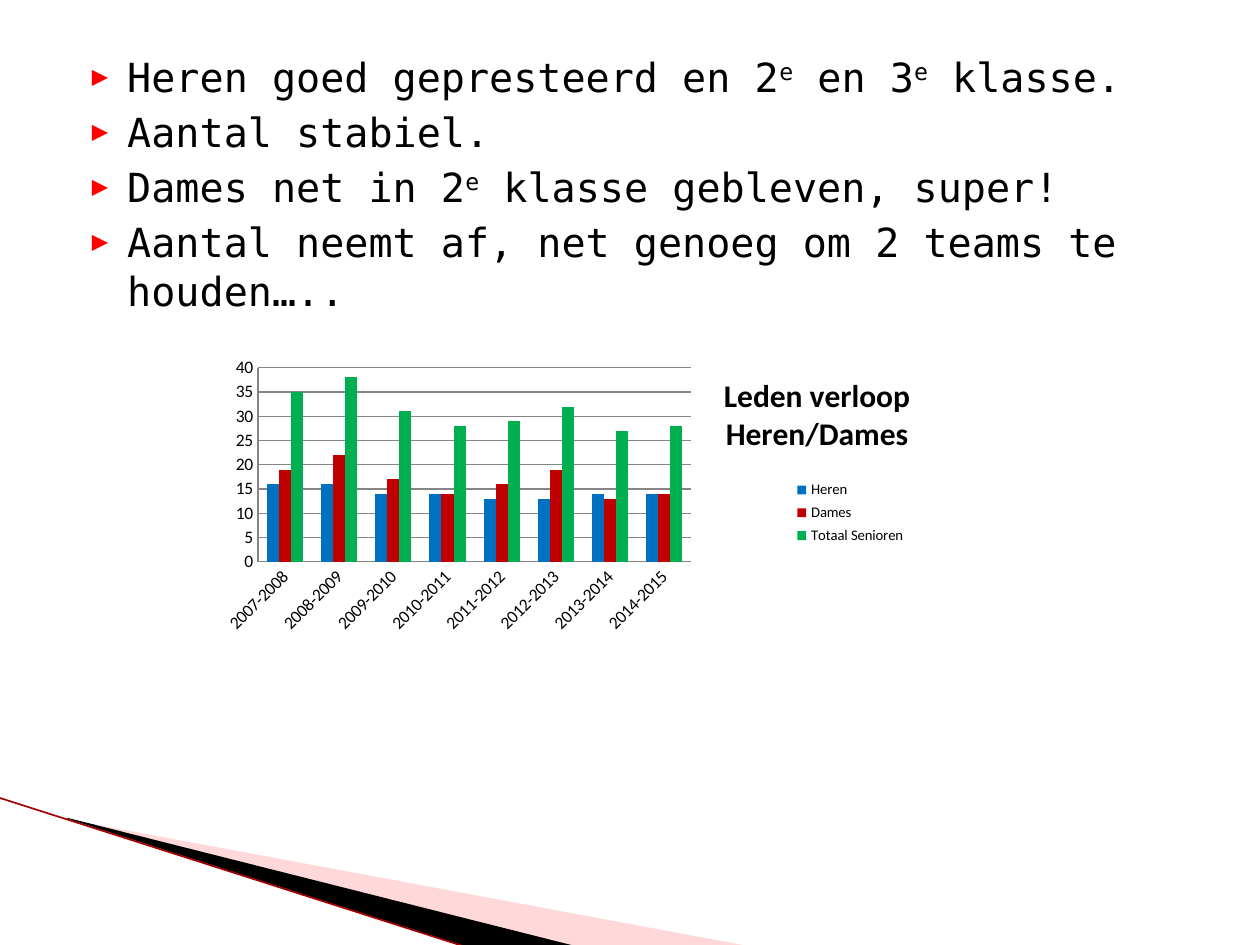
import pptx
import pptx.chart.data
import pptx.dml.color
import pptx.enum.chart
import pptx.enum.shapes
import pptx.enum.text
import pptx.oxml
import pptx.oxml.ns
import pptx.util

Pt = pptx.util.Pt
RGB = pptx.dml.color.RGBColor.from_string
qn = pptx.oxml.ns.qn
COLORS = {
    "text": "000000", "bullet": "FF0000", "pink": "FFA2A2", "black": "000000",
    "edge": "A50000", "axis": "868686",
    "Heren": "0070C0", "Dames": "C00000", "Totaal Senioren": "00B050",
}
A_NS = 'xmlns:a="http://schemas.openxmlformats.org/drawingml/2006/main"'
C_NS = 'xmlns:c="http://schemas.openxmlformats.org/drawingml/2006/chart"'


def place_part(part, position, x, y, w=None, h=None, inner=False):
    for old_layout in part.findall(qn("c:layout")):
        part.remove(old_layout)
    target = '<c:layoutTarget val="inner"/>' if inner else ""
    size = f'<c:w val="{w}"/><c:h val="{h}"/>' if w else ""
    part.insert(position, pptx.oxml.parse_xml(
        f'<c:layout {C_NS}><c:manualLayout>{target}'
        f'<c:xMode val="edge"/><c:yMode val="edge"/>'
        f'<c:x val="{x}"/><c:y val="{y}"/>{size}</c:manualLayout></c:layout>'))


def style_font(font, size, bold=False, name="Calibri"):
    font.name = name
    font.size = Pt(size)
    font.bold = bold
    font.color.rgb = RGB(COLORS["text"])


deck = pptx.Presentation()
deck.slide_width, deck.slide_height = Pt(720), Pt(540)
slide = deck.slides.add_slide(deck.slide_layouts[1])
heading = slide.shapes.title._element
heading.getparent().remove(heading)

wedges = [
    ("pink", 40, [(39.6, 468.4), (428.4, 540.7), (328.3, 540.7), (39.6, 468)]),
    ("black", 100, [(38.2, 467.3), (329, 540.7), (267.8, 541.4), (38.9, 468)]),
]
for color, opacity, points in wedges:
    outline = slide.shapes.build_freeform(Pt(points[0][0]), Pt(points[0][1]))
    outline.add_line_segments([(Pt(x), Pt(y)) for x, y in points[1:]], close=True)
    wedge = outline.convert_to_shape()
    wedge.shadow.inherit = False
    wedge.line.fill.background()
    wedge.fill.solid()
    wedge.fill.fore_color.rgb = RGB(COLORS[color])
    if opacity < 100:
        wedge._element.spPr.find(".//" + qn("a:srgbClr")).append(
            pptx.oxml.parse_xml(f'<a:alpha {A_NS} val="{opacity * 1000}"/>'))

edge = slide.shapes.add_connector(
    pptx.enum.shapes.MSO_CONNECTOR.STRAIGHT, Pt(-0.7), Pt(455.8), Pt(267.1), Pt(541.4))
edge.line.color.rgb = RGB(COLORS["edge"])
edge.line.width = Pt(0.95)
edge._element.spPr.append(pptx.oxml.parse_xml(f"<a:effectLst {A_NS}/>"))

remarks = slide.placeholders[1]
remarks.left, remarks.top, remarks.width, remarks.height = Pt(36.7), Pt(25.3), Pt(648), Pt(130)
remarks.text_frame.auto_size = pptx.enum.text.MSO_AUTO_SIZE.NONE
remarks.text_frame.word_wrap = True
remark_runs = [
    ["Heren goed gepresteerd en 2", "e", " en 3", "e", " klasse."],
    ["Aantal stabiel."],
    ["Dames net in 2", "e", " klasse gebleven, super!"],
    ["Aantal neemt af, net genoeg om 2 teams te houden….."],
]
for index, pieces in enumerate(remark_runs):
    remark = remarks.text_frame.paragraphs[0] if index == 0 else remarks.text_frame.add_paragraph()
    remark.space_before = Pt(3.2 if index else 0)
    remark.line_spacing = Pt(28.3)
    properties = remark._p.get_or_add_pPr()
    properties.set("marL", str(Pt(28.8)))
    properties.set("indent", str(-Pt(20.2)))
    for bullet in (
        f'<a:buClr {A_NS}><a:srgbClr val="{COLORS["bullet"]}"/></a:buClr>',
        f'<a:buSzPct {A_NS} val="68000"/>',
        f'<a:buFont {A_NS} typeface="DejaVu Sans Mono"/>',
        f'<a:buChar {A_NS} char="▶"/>',
    ):
        properties.append(pptx.oxml.parse_xml(bullet))
    style_font(remark.font, 22.9, name="DejaVu Sans Mono")
    for piece in pieces:
        run = remark.add_run()
        run.text = piece
        if piece == "e":
            run.font._element.set("baseline", "30000")

members = pptx.chart.data.CategoryChartData(number_format="0")
members.categories = [f"{year}-{year + 1}" for year in range(2007, 2015)]
members.add_series("Heren", [16, 16, 14, 14, 13, 13, 14, 14])
members.add_series("Dames", [19, 22, 17, 14, 16, 19, 13, 14])
members.add_series("Totaal Senioren", [35, 38, 31, 28, 29, 32, 27, 28])
chart = slide.shapes.add_chart(
    pptx.enum.chart.XL_CHART_TYPE.COLUMN_CLUSTERED,
    Pt(121.7), Pt(196.6), Pt(402.5), Pt(193), members).chart
style_font(chart.font, 10)

chart.has_title = True
chart_title = chart.chart_title.text_frame
chart_title.text = "Leden verloop\nHeren/Dames"
for line in chart_title.paragraphs:
    style_font(line.font, 18, bold=True)
place_part(chart.chart_title._element, 1, 0.72, 0.08)

plot = chart.plots[0]
plot.gap_width = 150
plot.overlap = 0
plot.vary_by_categories = False
for series in plot.series:
    series.format.fill.solid()
    series.format.fill.fore_color.rgb = RGB(COLORS[series.name])
place_part(chart._chartSpace.chart.plotArea, 0, 0.064, 0.07, 0.615, 0.575, inner=True)

for axis in (chart.category_axis, chart.value_axis):
    axis.major_tick_mark = pptx.enum.chart.XL_TICK_MARK.NONE
    axis.format.line.color.rgb = RGB(COLORS["axis"])
    style_font(axis.tick_labels.font, 10)
chart.category_axis._element.find(".//" + qn("a:bodyPr")).set("rot", "-2700000")
counts = chart.value_axis
counts.minimum_scale, counts.maximum_scale, counts.major_unit = 0, 40, 5
counts.has_major_gridlines = True
counts.major_gridlines.format.line.color.rgb = RGB(COLORS["axis"])

chart.has_legend = True
legend = chart.legend
legend.position = pptx.enum.chart.XL_LEGEND_POSITION.RIGHT
legend.include_in_layout = False
style_font(legend.font, 8.4)
place_part(legend._element, 1, 0.81, 0.39, 0.19, 0.22)

deck.save("out.pptx")
